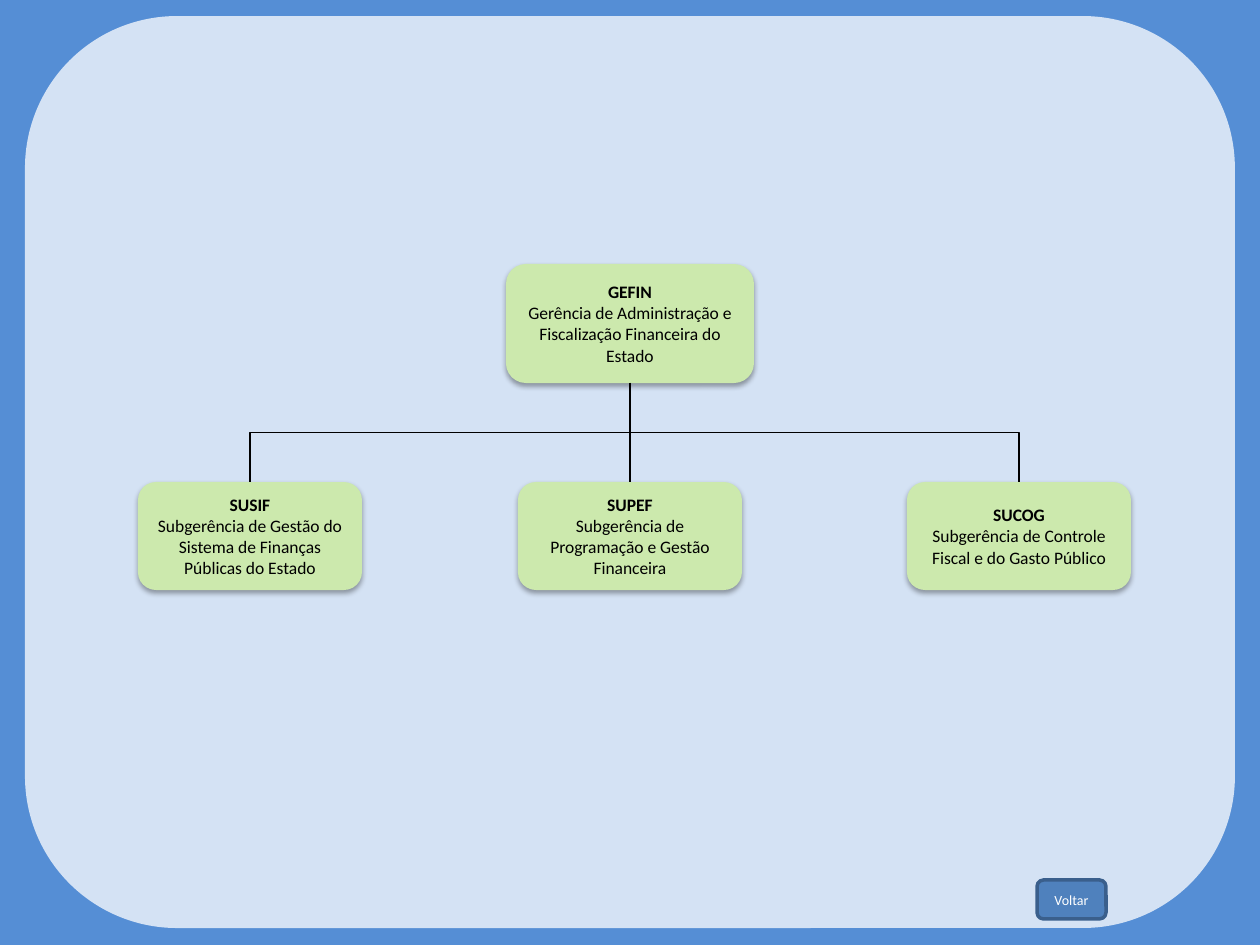
from lxml.etree import SubElement
from pptx import Presentation
from pptx.dml.color import RGBColor
from pptx.enum.shapes import MSO_CONNECTOR as Connector, MSO_SHAPE as Shape
from pptx.enum.text import MSO_ANCHOR as Anchor, PP_ALIGN as Align
from pptx.oxml.ns import qn
from pptx.util import Pt

EMU_PER_PX = 914400 / 126
BLACK, WHITE, GREEN = "000000", "FFFFFF", "CCE9AD"
CHILD_TOP = 482
CHILDREN = [
    (250, "SUSIF", "Subgerência de Gestão do Sistema de Finanças Públicas do Estado"),
    (630, "SUPEF", "Subgerência de Programação e Gestão Financeira"),
    (1019, "SUCOG", "Subgerência de Controle Fiscal e do Gasto Público"),
]


def px(length):
    """Turn pixels into EMU."""
    return round(length * EMU_PER_PX)


def paint(color_fill, color):
    """Give a fill one solid colour."""
    color_fill.solid()
    color_fill.fore_color.rgb = RGBColor.from_string(color)


def add_rounded(slide, left, top, width, height, color):
    """Add a plain rounded rectangle without line or shadow."""
    shape = slide.shapes.add_shape(
        Shape.ROUNDED_RECTANGLE, px(left), px(top), px(width), px(height))
    shape.shadow.inherit = False
    paint(shape.fill, color)
    shape.line.fill.background()
    return shape


def add_shadow(shape):
    """Put a soft black shadow just below a shape."""
    effects = shape._element.spPr.find(qn("a:effectLst"))
    shadow = SubElement(effects, qn("a:outerShdw"), blurRad=str(Pt(3.1)),
                        dist=str(Pt(1.8)), dir="5400000", rotWithShape="0")
    color = SubElement(shadow, qn("a:srgbClr"), val=BLACK)
    SubElement(color, qn("a:alpha"), val="35000")


def write(shape, lines, size, color):
    """Write centred lines, the first one bold when there are several."""
    frame = shape.text_frame
    frame.word_wrap = True
    frame.vertical_anchor = Anchor.MIDDLE
    frame.text = "\n".join(lines)
    for index, paragraph in enumerate(frame.paragraphs):
        paragraph.alignment = Align.CENTER
        font = paragraph.font
        font.name, font.size = "Calibri", Pt(size)
        font.bold = index == 0 and len(lines) > 1
        font.color.rgb = RGBColor.from_string(color)


def add_unit(slide, center, top, width, height, lines, inset=None):
    """Add one box of the chart, centred on a column."""
    shape = add_rounded(slide, center - width / 2, top, width, height, GREEN)
    add_shadow(shape)
    write(shape, lines, 10, BLACK)
    if inset is not None:
        frame = shape.text_frame
        frame.margin_left = frame.margin_right = px(inset)
        frame.margin_top = frame.margin_bottom = px(inset)
    return shape


def add_branch(slide, parent, child):
    """Join a parent's bottom to a child's top with a turned elbow."""
    start_x = parent.left + parent.width // 2
    start_y = parent.top + parent.height
    shift = child.left + child.width // 2 - start_x
    drop = child.top - start_y
    middle_x, middle_y = start_x + shift // 2, start_y + drop // 2
    branch = slide.shapes.add_connector(Connector.ELBOW, 0, 0, 0, 0)
    branch.begin_connect(parent, 2)
    branch.end_connect(child, 0)
    branch.begin_x, branch.end_x = middle_x - drop // 2, middle_x + drop // 2
    branch.begin_y, branch.end_y = middle_y + shift // 2, middle_y - shift // 2
    branch._element.spPr.find(qn("a:xfrm")).set("rot", "5400000")
    paint(branch.line.fill, BLACK)
    branch.line.width = Pt(0.75)
    SubElement(branch._element.spPr, qn("a:effectLst"))


def add_button(slide):
    """Add the back button."""
    button = add_rounded(slide, 1037, 880, 69, 39, "4F81BD")
    paint(button.line.fill, "3A5F8C")
    button.line.width = Pt(2)
    write(button, ["Voltar"], 8, WHITE)


def main():
    """Build the organisation chart slide."""
    presentation = Presentation()
    presentation.slide_width, presentation.slide_height = px(1260), px(945)
    slide = presentation.slides.add_slide(presentation.slide_layouts[6])
    paint(slide.background.fill, "558ED5")
    add_rounded(slide, 25, 16, 1210, 912, "D4E2F4")
    parent = add_unit(slide, 630, 264, 248, 119, [
        "GEFIN", "Gerência de Administração e Fiscalização Financeira do Estado"])
    for center, acronym, name in CHILDREN:
        child = add_unit(slide, center, CHILD_TOP, 224, 108, [acronym, name], 5)
        add_branch(slide, parent, child)
    add_button(slide)
    presentation.save("out.pptx")


if __name__ == "__main__":
    main()
